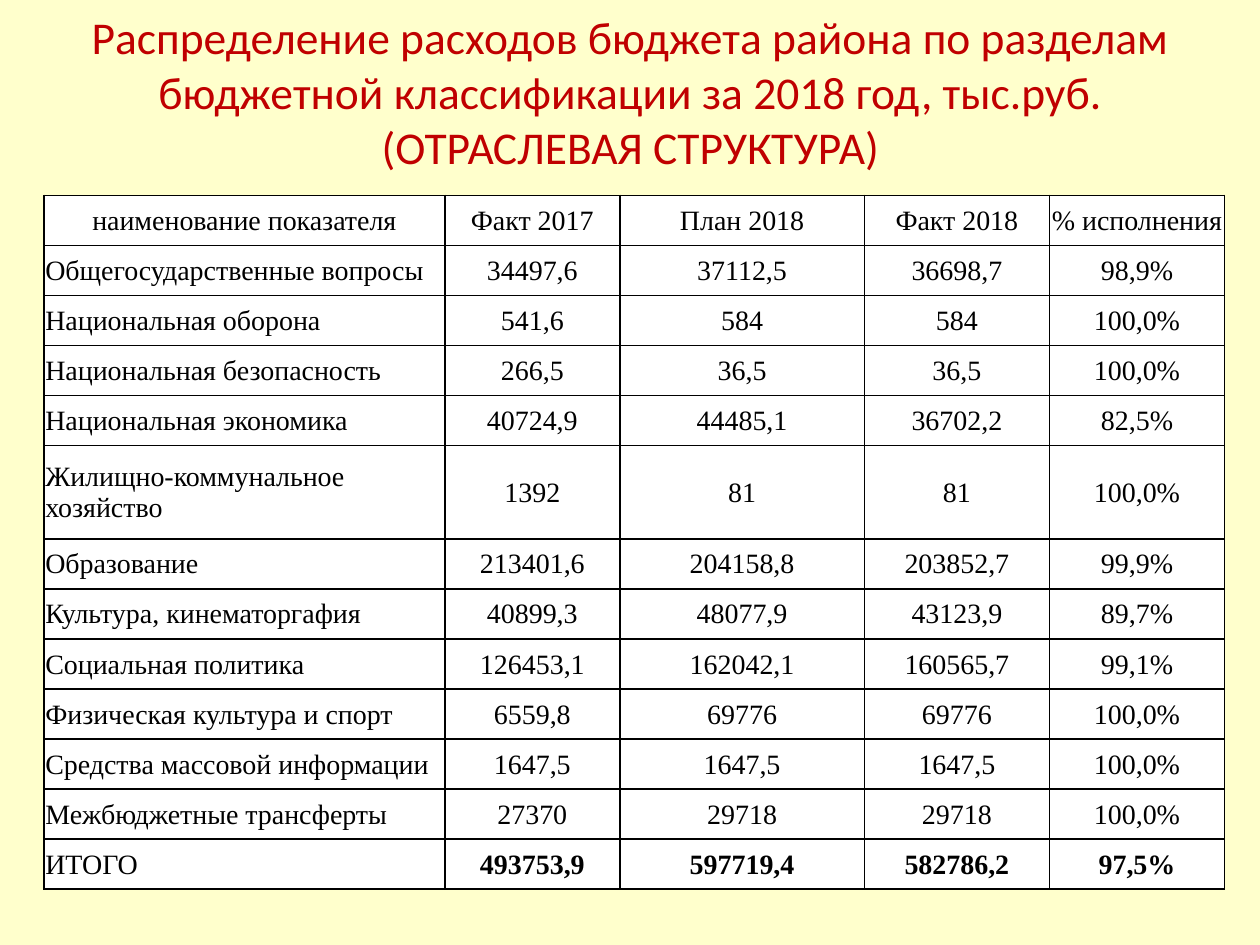
"""Build a slide with district budget expenditure by section for 2018."""
from lxml import etree
from pptx import Presentation
from pptx import util as u
from pptx.dml.color import RGBColor
from pptx.enum import text
from pptx.oxml.ns import qn

THEME = {
    "background": "FFFFCC", "title": "C00000", "cell": "FFFFFF", "ink": "000000",
    "title_font": "Calibri", "table_font": "Times New Roman",
    "title_size": 26, "table_size": 16, "border": 1, "outline": 0.75,
}
TITLE = [
    "Распределение расходов бюджета района по разделам бюджетной классификации за 2018 год, тыс.руб.",
    "(ОТРАСЛЕВАЯ СТРУКТУРА)",
]
HEADER = ("наименование показателя", "Факт 2017", "План 2018", "Факт 2018", "% исполнения")
SECTIONS = [
    ("Общегосударственные вопросы", "34497,6", "37112,5", "36698,7", "98,9%"),
    ("Национальная оборона", "541,6", "584", "584", "100,0%"),
    ("Национальная безопасность", "266,5", "36,5", "36,5", "100,0%"),
    ("Национальная экономика", "40724,9", "44485,1", "36702,2", "82,5%"),
    ("Жилищно-коммунальное хозяйство", "1392", "81", "81", "100,0%"),
    ("Образование", "213401,6", "204158,8", "203852,7", "99,9%"),
    ("Культура, кинематоргафия", "40899,3", "48077,9", "43123,9", "89,7%"),
    ("Социальная политика", "126453,1", "162042,1", "160565,7", "99,1%"),
    ("Физическая культура и спорт", "6559,8", "69776", "69776", "100,0%"),
    ("Средства массовой информации", "1647,5", "1647,5", "1647,5", "100,0%"),
    ("Межбюджетные трансферты", "27370", "29718", "29718", "100,0%"),
]
TOTAL = ("ИТОГО", "493753,9", "597719,4", "582786,2", "97,5%")
ROWS = [HEADER, *SECTIONS, TOTAL]
COLUMN_WIDTHS = (3.18, 1.39, 1.94, 1.47, 1.39)
TABLE_LEFT, TABLE_TOP, TABLE_HEIGHT = 0.35, 1.55, 5.51
TALL_ROW, TALL_HEIGHT = 5, 0.74
ROW_HEIGHT = (TABLE_HEIGHT - TALL_HEIGHT) / (len(ROWS) - 1)


def color(name):
    return RGBColor.from_string(THEME[name])


def add_run(p, words, kind, ink, bold=False):
    r = p.add_run()
    r.text = words
    r.font.name = THEME[f"{kind}_font"]
    r.font.size = u.Pt(THEME[f"{kind}_size"])
    r.font.color.rgb = color(ink)
    r.font.bold = bold
    return r


def make_line(tag, width, ink):
    line = etree.Element(qn(tag), w=str(u.Pt(width)))
    fill = etree.SubElement(line, qn("a:solidFill"))
    etree.SubElement(fill, qn("a:srgbClr"), val=THEME[ink])
    return line


def add_title(slide):
    sp = slide.shapes.add_textbox(u.Inches(0.2), u.Inches(0.29), u.Inches(9.61), u.Inches(0.87))
    tf = sp.text_frame
    tf.word_wrap = True
    tf.vertical_anchor = text.MSO_ANCHOR.MIDDLE
    p = tf.paragraphs[0]
    p.alignment = text.PP_ALIGN.CENTER
    for i, words in enumerate(TITLE):
        if i:
            p.add_line_break()
        r = add_run(p, words, "title", "title")
        r.font.fill.solid()
        r.font.color.rgb = color("title")
        r.font._element.insert(0, make_line("a:ln", THEME["outline"], "title"))


def fill_cell(cell, words, centred, bold):
    cell.margin_left = cell.margin_right = cell.margin_top = u.Inches(0.01)
    cell.margin_bottom = 0
    cell.vertical_anchor = text.MSO_ANCHOR.MIDDLE
    props = cell._tc.get_or_add_tcPr()
    for side in "LRTB":
        props.append(make_line(f"a:ln{side}", THEME["border"], "ink"))
    cell.fill.solid()
    cell.fill.fore_color.rgb = color("cell")
    p = cell.text_frame.paragraphs[0]
    p.alignment = text.PP_ALIGN.CENTER if centred else text.PP_ALIGN.LEFT
    add_run(p, words, "table", "ink", bold)


def add_budget_table(slide):
    table = slide.shapes.add_table(
        len(ROWS), len(HEADER), u.Inches(TABLE_LEFT), u.Inches(TABLE_TOP),
        u.Inches(sum(COLUMN_WIDTHS)), u.Inches(TABLE_HEIGHT)).table
    table.horz_banding = False
    table.first_row = False
    for column, width in zip(table.columns, COLUMN_WIDTHS):
        column.width = u.Inches(width)
    for i, values in enumerate(ROWS):
        table.rows[i].height = u.Inches(TALL_HEIGHT if i == TALL_ROW else ROW_HEIGHT)
        for j, words in enumerate(values):
            fill_cell(table.cell(i, j), words, i == 0 or j > 0, values is TOTAL and j > 0)


def main():
    prs = Presentation()
    prs.slide_width, prs.slide_height = u.Inches(10), u.Inches(7.5)
    slide = prs.slides.add_slide(prs.slide_layouts[6])
    slide.background.fill.solid()
    slide.background.fill.fore_color.rgb = color("background")
    add_title(slide)
    add_budget_table(slide)
    prs.save("out.pptx")


if __name__ == "__main__":
    main()
